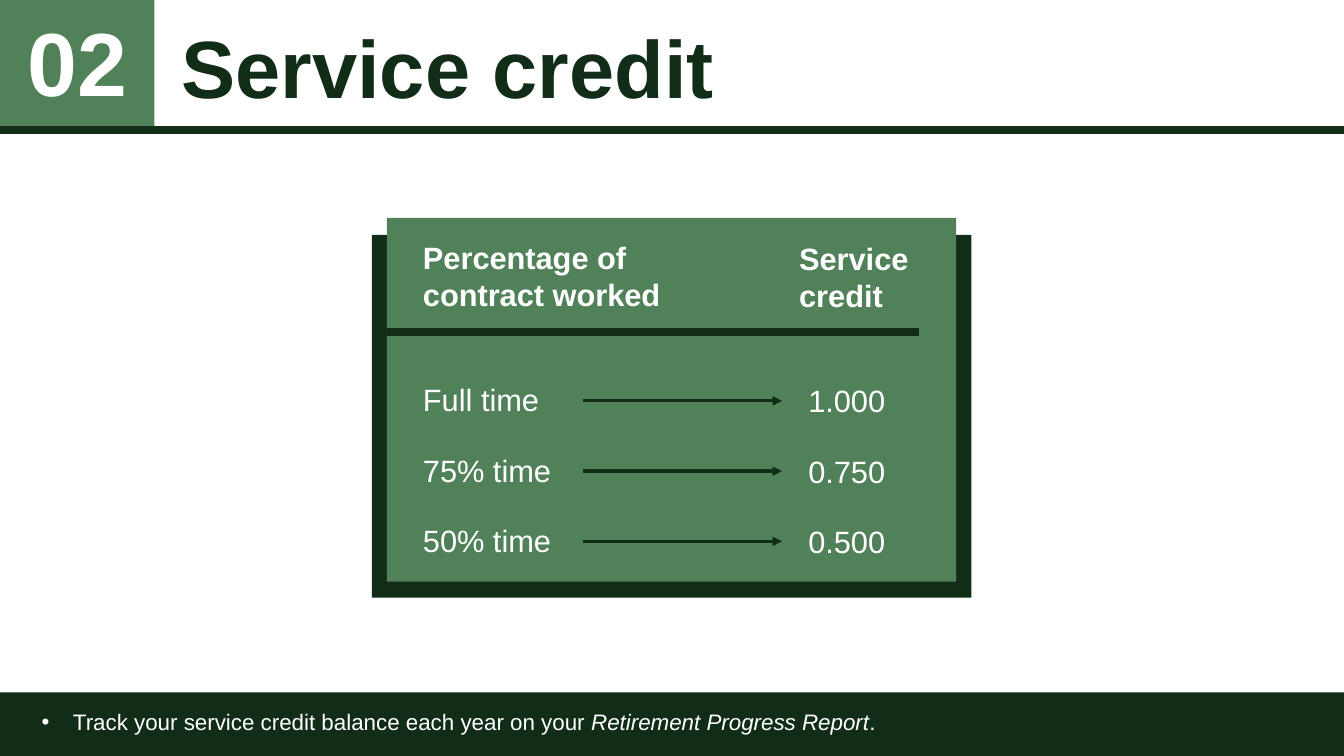
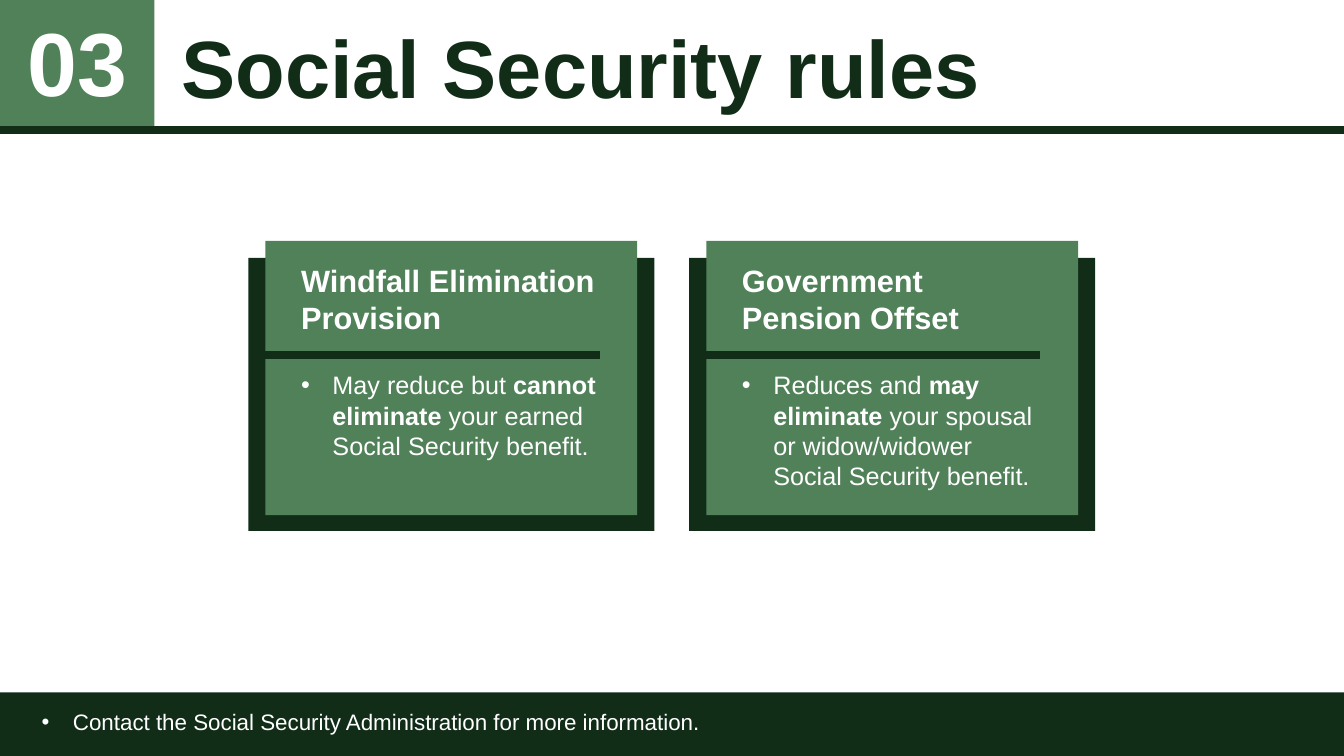
from dataclasses import dataclass

from lxml.etree import SubElement as Sub
from pptx import Presentation
from pptx.dml.color import RGBColor as Rgb
from pptx.enum.shapes import MSO_CONNECTOR as Conn, MSO_SHAPE as Kind
from pptx.enum.text import MSO_ANCHOR as Anchor, MSO_AUTO_SIZE as Fit, PP_ALIGN as Align
from pptx.oxml.ns import qn
from pptx.util import Cm, Pt


@dataclass(frozen=True)
class Theme:
    dark: Rgb = Rgb(0x11, 0x2D, 0x18)
    green: Rgb = Rgb(0x51, 0x81, 0x59)
    white: Rgb = Rgb(0xFF, 0xFF, 0xFF)
    face: str = "Arial"
    title: int = 58
    number: int = 64
    head: int = 22
    body: int = 18
    foot: int = 16
    gap: int = 24
    rule: float = 6
    arrow: float = 2.25


THEME = Theme()
WIDE, HIGH = 33.87, 19.05
TOP = 3.28


def style(para, size, color=THEME.white, bold=False):
    font = para.font
    font.name, font.size, font.bold = THEME.face, Pt(size), bold
    font.color.rgb = color


def bullet(para):
    props = para._p.get_or_add_pPr()
    props.set("marL", str(Cm(0.79)))
    props.set("indent", str(Cm(-0.79)))
    Sub(props, qn("a:buFont"), typeface=THEME.face)
    Sub(props, qn("a:buChar"), char="•")


def fill(para, parts, size, mark=None, bold=False, dot=False, gap=0):
    if dot:
        bullet(para)
    style(para, size, bold=bold)
    para.space_after = Pt(gap)
    for i, part in enumerate(parts):
        run = para.add_run()
        run.text = part
        if i % 2:
            setattr(run.font, mark, True)


def block(slide, x, y, w, h, color):
    shape = slide.shapes.add_shape(Kind.RECTANGLE, Cm(x), Cm(y), Cm(w), Cm(h))
    shape.shadow.inherit = False
    shape.fill.solid()
    shape.fill.fore_color.rgb = color
    shape.line.fill.background()


def text(slide, x, y, w, h, paras):
    box = slide.shapes.add_textbox(Cm(x), Cm(y), Cm(w), Cm(h))
    frame = box.text_frame
    frame.word_wrap = True
    frame.auto_size = Fit.SHAPE_TO_FIT_TEXT
    for i, para in enumerate(paras):
        fill(frame.add_paragraph() if i else frame.paragraphs[0], **para)
    return frame


def line(slide, x, y, w, weight, tip=False):
    link = slide.shapes.add_connector(Conn.STRAIGHT, Cm(x), Cm(y), Cm(x + w), Cm(y))
    link.line.color.rgb = THEME.dark
    link.line.width = Pt(weight)
    if tip:
        Sub(link.line._get_or_add_ln(), qn("a:tailEnd"), type="triangle")
    Sub(link._element.spPr, qn("a:effectLst"))


def head(words):
    return dict(parts=[words], size=THEME.head, bold=True, gap=THEME.gap)


def column(slide, x, y, w, words):
    paras = [dict(parts=[word], size=THEME.head, gap=THEME.gap) for word in words]
    text(slide, x, y, w, 4.78, paras)


def card(slide, x, y, w, h, pad):
    block(slide, x - pad, y + 0.43, w + 2 * pad, h - 0.03, THEME.dark)
    block(slide, x, y, w, h, THEME.green)
    line(slide, x, y + 2.87, w - 0.95, THEME.rule)


def page(deck, number, title, foot):
    slide = deck.slides.add_slide(deck.slide_layouts[5])
    block(slide, 0, 0, 3.89, TOP, THEME.green)
    badge = text(slide, 0.43, 0.48, 3.05, 2.44, [dict(parts=[number], size=THEME.number, bold=True)])
    badge.auto_size = Fit.NONE
    badge.vertical_anchor = Anchor.MIDDLE
    badge.paragraphs[0].alignment = Align.CENTER
    badge.paragraphs[0].line_spacing = 0.9
    line(slide, 0, TOP, WIDE, THEME.rule)

    name = slide.shapes.title
    name.left, name.top, name.width, name.height = Cm(4.32), Cm(0.03), Cm(29.11), Cm(TOP)
    frame = name.text_frame
    frame.text = title
    frame.auto_size = Fit.NONE
    frame.vertical_anchor = Anchor.MIDDLE
    frame.paragraphs[0].alignment = Align.LEFT
    style(frame.paragraphs[0], THEME.title, THEME.dark, True)

    block(slide, 0, 17.45, WIDE, HIGH - 17.45, THEME.dark)
    text(slide, 0.8, 17.73, 24.5, 0.94, [dict(parts=foot, size=THEME.foot, mark="italic", dot=True)])
    return slide


def credit(deck):
    foot = ["Track your service credit balance each year on your ", "Retirement Progress Report", "."]
    slide = page(deck, "02", "Service credit", foot)
    card(slide, 9.75, 5.49, 14.35, 9.17, 0.38)
    text(slide, 10.41, 5.89, 6.6, 2.13, [head("Percentage of contract worked")])
    text(slide, 19.89, 5.92, 3.86, 2.13, [head("Service credit")])
    column(slide, 10.41, 9.47, 4.06, ["Full time", "75% time", "50% time"])
    column(slide, 20.12, 9.5, 3.3, ["1.000", "0.750", "0.500"])
    for i in range(3):
        line(slide, 14.68, 10.1 + 1.77 * i, 5.03, THEME.arrow, tip=True)


def rules(deck):
    foot = ["Contact the Social Security Administration for more information."]
    slide = page(deck, "03", "Social Security rules", foot)
    cards = [
        ("Windfall Elimination Provision",
         ["May reduce but ", "cannot eliminate", " your earned Social Security benefit."]),
        ("Government Pension Offset",
         ["Reduces and ", "may eliminate", " your spousal or widow/widower Social Security benefit."]),
    ]
    for i, (name, parts) in enumerate(cards):
        x, y = 6.69 + 11.11 * i, 6.07
        card(slide, x, y, 9.37, 6.91, 0.43)
        body = dict(parts=parts, size=THEME.body, mark="bold", dot=True, gap=THEME.gap)
        text(slide, x + 0.65, y + 0.41, 7.98, 5.3 + 0.76 * i, [head(name), body])


def main():
    deck = Presentation()
    deck.slide_width, deck.slide_height = Cm(WIDE), Cm(HIGH)
    credit(deck)
    rules(deck)
    deck.save("out.pptx")


if __name__ == "__main__":
    main()
